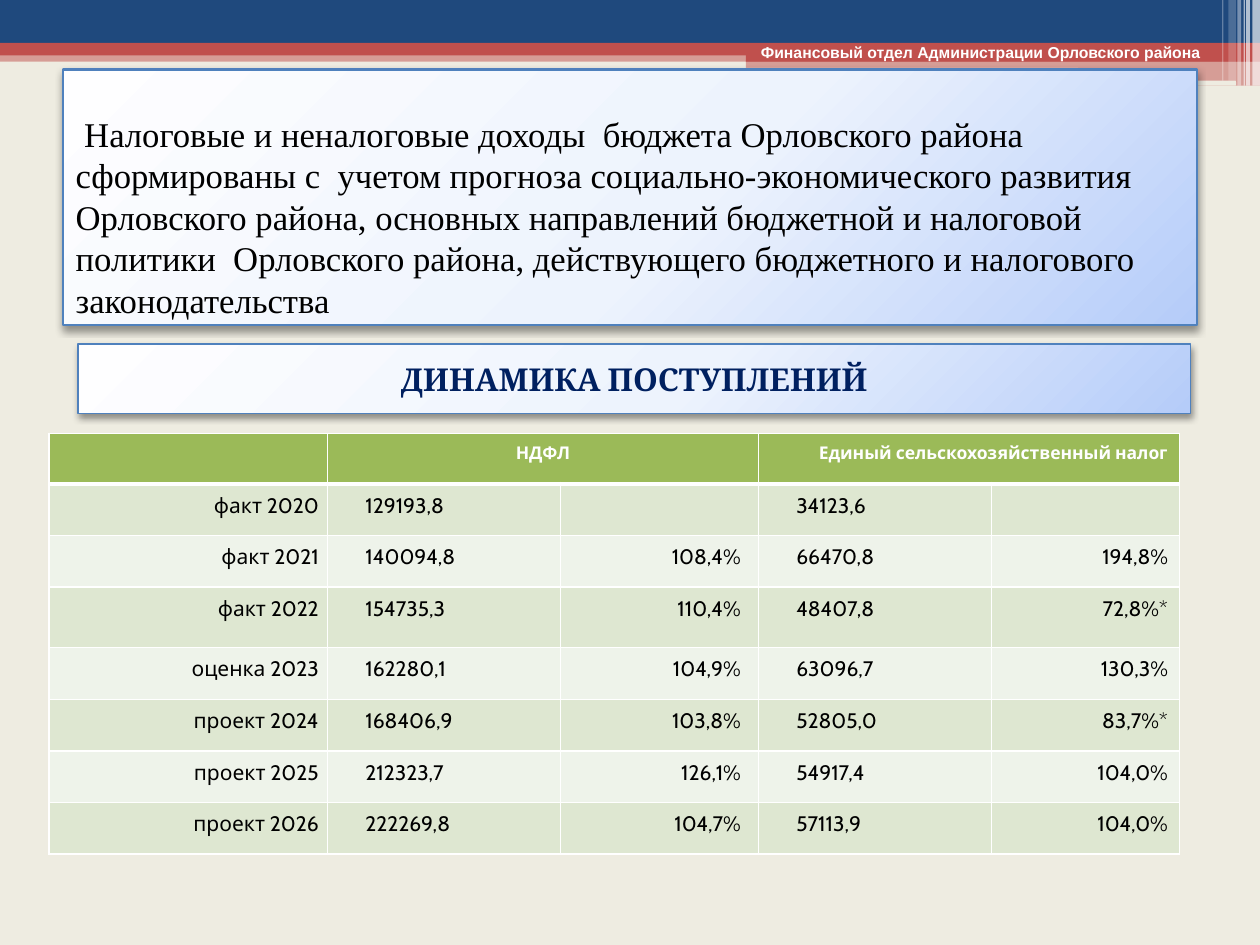
from lxml import etree
from pptx import Presentation
from pptx.dml.color import RGBColor
from pptx.enum import shapes, text
from pptx.oxml import ns, parse_xml
from pptx.util import Inches, Pt

COLORS = {"navy": "1F497D", "red": "C0504D", "white": "FFFFFF", "cream": "EEECE1",
          "blue": "4F81BD", "ink": "002060", "black": "000000",
          "header": "9BBA58", "dark_row": "DEE7D1", "light_row": "EEF3EA"}
GRADIENT_STOPS = [(0, "FEFEFF"), (55, "EDF3FD"), (100, "B5CCF9")]


def style_panel(panel, line_width):
    """Give a panel its radial gradient, blue outline and soft shadow."""
    panel.fill.gradient()
    gradient = panel._element.spPr.find(ns.qn("a:gradFill"))
    for child in list(gradient):
        gradient.remove(child)
    stops = etree.SubElement(gradient, ns.qn("a:gsLst"))
    for position, color in GRADIENT_STOPS:
        stop = etree.SubElement(stops, ns.qn("a:gs"), pos=str(position * 1000))
        etree.SubElement(stop, ns.qn("a:srgbClr"), val=color)
    circle = etree.SubElement(gradient, ns.qn("a:path"))
    circle.set("path", "circle")
    etree.SubElement(circle, ns.qn("a:fillToRect"), l="-40000", t="-90000",
                     r="140000", b="190000")
    panel.line.color.rgb = RGBColor.from_string(COLORS["blue"])
    panel.line.width = Pt(line_width)
    panel.shadow.inherit = False
    panel._element.spPr.find(ns.qn("a:effectLst")).append(parse_xml(
        f'<a:outerShdw {ns.nsdecls("a")} blurRad="{Pt(4.1)}" dist="{Pt(2)}" '
        f'dir="5400000" rotWithShape="0"><a:srgbClr val="{COLORS["black"]}">'
        '<a:alpha val="40000"/></a:srgbClr></a:outerShdw>'))


def format_text(paragraph, font_name, size, color, bold=False):
    for run in paragraph.runs:
        run.font.name = font_name
        run.font.size = Pt(size)
        run.font.bold = bold
        run.font.color.rgb = RGBColor.from_string(COLORS[color])


presentation = Presentation()
presentation.slide_width = Inches(10)
presentation.slide_height = Inches(7.5)
slide = presentation.slides.add_slide(presentation.slide_layouts[5])
slide.background.fill.solid()
slide.background.fill.fore_color.rgb = RGBColor.from_string(COLORS["cream"])

# Header bands and stripes: left, top, width, height, color, opacity, rounded
bands = [
    (0, 0.4, 10, 0.09, "red", 50, False),
    (0, 0, 10, 0.34, "navy", 100, False),
    (0, 0.34, 10, 0.1, "red", 100, False),
    (5.92, 0.39, 4.08, 0.1, "red", 100, False),
    (5.92, 0.48, 4.08, 0.2, "red", 50, False),
    (5.91, 0.54, 3.35, 0.03, "cream", 100, True),
    (8.06, 0.64, 1.75, 0.04, "cream", 100, True),
    (9.94, 0, 0.06, 0.68, "white", 65, False),
    (9.89, 0, 0.03, 0.68, "white", 65, False),
    (9.87, 0, 0.01, 0.68, "white", 60, False),
    (9.82, 0, 0.03, 0.68, "white", 40, False),
    (9.75, 0, 0.06, 0.64, "white", 20, False),
    (9.7, 0, 0.01, 0.64, "white", 30, False),
]
for left, top, width, height, color, opacity, rounded in bands:
    kind = shapes.MSO_SHAPE.ROUNDED_RECTANGLE if rounded else shapes.MSO_SHAPE.RECTANGLE
    band = slide.shapes.add_shape(kind, Inches(left), Inches(top), Inches(width), Inches(height))
    band.shadow.inherit = False
    band.line.fill.background()
    band.fill.solid()
    band.fill.fore_color.rgb = RGBColor.from_string(COLORS[color])
    if opacity < 100:
        fill_color = band._element.spPr.find(".//" + ns.qn("a:srgbClr"))
        etree.SubElement(fill_color, ns.qn("a:alpha"), val=str(opacity * 1000))

# Department name
department = slide.shapes.add_textbox(Inches(5.94), Inches(0.29), Inches(3.91), Inches(0.25))
department.text_frame.word_wrap = True
department.text_frame.text = "Финансовый отдел Администрации Орловского района"
format_text(department.text_frame.paragraphs[0], "Arial", 9, "white", True)

# Title panel, in front of the bands
title = slide.shapes.title
slide.shapes._spTree.append(title._element)
title.left, title.top, title.width, title.height = map(Inches, (0.5, 0.55, 9, 2.03))
style_panel(title, 1.5)
frame = title.text_frame
frame.text = (" Налоговые и неналоговые доходы  бюджета Орловского района сформированы с  учетом "
              "прогноза социально-экономического развития Орловского района, основных "
              "направлений бюджетной и налоговой политики  Орловского района, действующего "
              "бюджетного и налогового  законодательства")
frame.word_wrap = True
frame.auto_size = text.MSO_AUTO_SIZE.NONE
frame.vertical_anchor = text.MSO_ANCHOR.BOTTOM
frame.margin_bottom = Inches(0.04)
frame.paragraphs[0].alignment = text.PP_ALIGN.LEFT
frame.paragraphs[0].line_spacing = Pt(23.7)
format_text(frame.paragraphs[0], "Times New Roman", 19.8, "black")

# Revenue table
rows = [
    ("", "НДФЛ", "", "Единый сельскохозяйственный налог", ""),
    ("факт 2020", "129193,8", "", "34123,6", ""),
    ("факт 2021", "140094,8", "108,4%", "66470,8", "194,8%"),
    ("факт 2022", "154735,3", "110,4%", "48407,8", "72,8%*"),
    ("оценка 2023", "162280,1", "104,9%", "63096,7", "130,3%"),
    ("проект 2024", "168406,9", "103,8%", "52805,0", "83,7%*"),
    ("проект 2025", "212323,7", "126,1%", "54917,4", "104,0%"),
    ("проект 2026", "222269,8", "104,7%", "57113,9", "104,0%"),
]
column_widths = [2.21, 1.85, 1.57, 1.85, 1.49]
row_heights = [0.4, 0.41, 0.41, 0.48, 0.41, 0.41, 0.41, 0.41]
left_margins = [0, 0.3, 0, 0.3, 0]
right_margins = [0.07, 0, 0.14, 0, 0.09]
table = slide.shapes.add_table(len(rows), len(column_widths), Inches(0.39), Inches(3.44),
                               Inches(sum(column_widths)), Inches(sum(row_heights))).table
for column, width in zip(table.columns, column_widths):
    column.width = Inches(width)
for row, height in zip(table.rows, row_heights):
    row.height = Inches(height)
for column_index in (1, 3):
    table.cell(0, column_index).merge(table.cell(0, column_index + 1))

for row_index, values in enumerate(rows):
    is_header = row_index == 0
    row_color = "header" if is_header else "dark_row" if row_index % 2 else "light_row"
    edges = {"L": 1, "R": 1, "T": 3 if row_index == 1 else 1, "B": 3 if is_header else 1}
    for column_index, value in enumerate(values):
        cell = table.cell(row_index, column_index)
        cell.margin_top, cell.margin_bottom = Inches(0.07), 0
        cell.margin_left = Inches(left_margins[column_index])
        cell.margin_right = Inches(right_margins[column_index])
        properties = cell._tc.get_or_add_tcPr()
        for edge, width in edges.items():
            properties.append(parse_xml(
                f'<a:ln{edge} {ns.nsdecls("a")} w="{Pt(width)}"><a:solidFill>'
                f'<a:srgbClr val="{COLORS["white"]}"/></a:solidFill></a:ln{edge}>'))
        cell.fill.solid()
        cell.fill.fore_color.rgb = RGBColor.from_string(COLORS[row_color])
        if not value:
            continue
        cell.text_frame.text = value
        paragraph = cell.text_frame.paragraphs[0]
        paragraph.alignment = text.PP_ALIGN.LEFT if column_index % 2 else text.PP_ALIGN.RIGHT
        format_text(paragraph, "Cabin", 10 if is_header else 12,
                    "white" if is_header else "black", is_header)

# Header cells span two columns and keep their own alignment
table.cell(0, 1).margin_left = 0
table.cell(0, 1).text_frame.paragraphs[0].alignment = text.PP_ALIGN.CENTER
table.cell(0, 3).margin_left = Inches(0.48)

# Subtitle panel
subtitle = slide.shapes.add_shape(shapes.MSO_SHAPE.RECTANGLE, Inches(0.62), Inches(2.73),
                                  Inches(8.83), Inches(0.55))
style_panel(subtitle, 0.75)
subtitle.text_frame.text = "ДИНАМИКА ПОСТУПЛЕНИЙ"
subtitle.text_frame.vertical_anchor = text.MSO_ANCHOR.MIDDLE
subtitle.text_frame.paragraphs[0].alignment = text.PP_ALIGN.CENTER
format_text(subtitle.text_frame.paragraphs[0], "Cambria", 18, "ink", True)

presentation.save("out.pptx")
